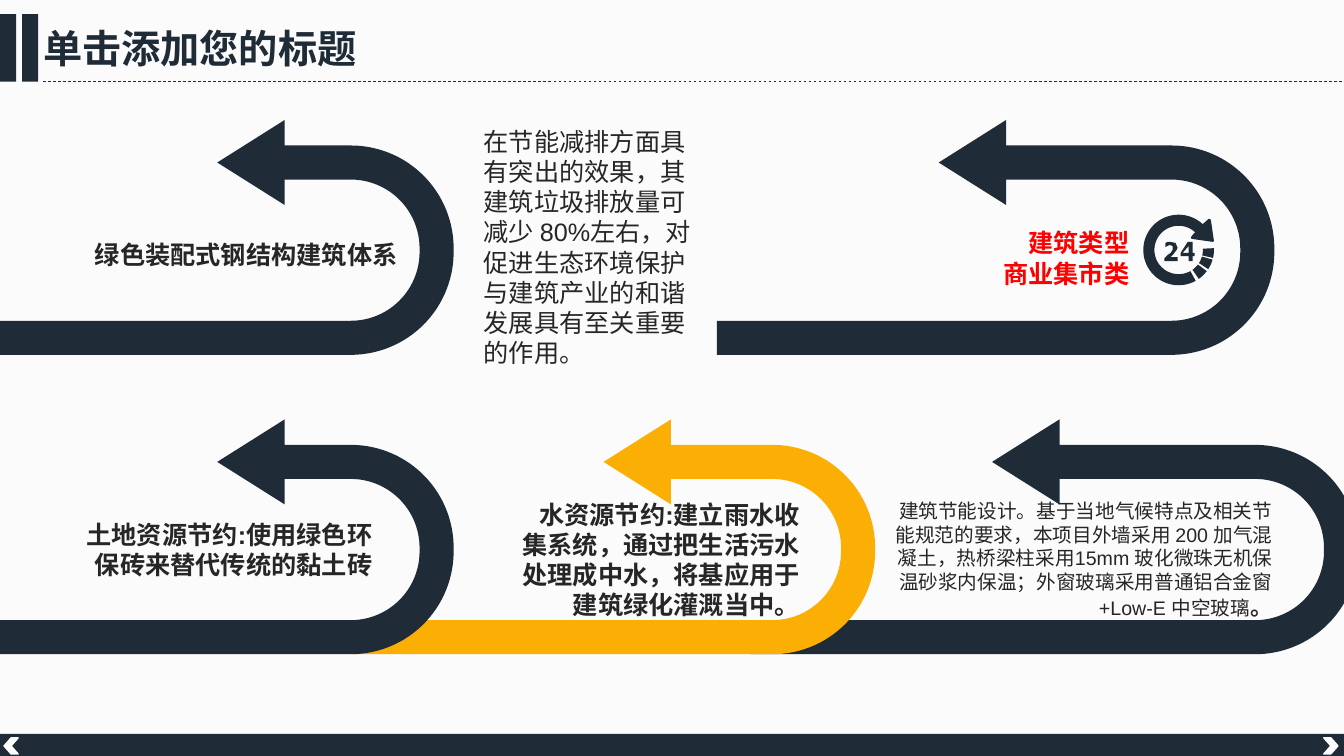
from math import cos, radians, sin

from pptx import Presentation
from pptx.dml.color import RGBColor
from pptx.enum.dml import MSO_LINE
from pptx.enum.shapes import MSO_CONNECTOR, MSO_SHAPE
from pptx.enum.text import PP_ALIGN
from pptx.oxml.ns import qn
from pptx.util import Inches, Pt
from lxml.etree import SubElement

NAVY, AMBER, RED, INK, WHITE = "1F2B37", "FBAE03", "FF0000", "262626", "FFFFFF"
WIDTH, HEIGHT = 13.33, 7.5
BODY = {"size": Pt(18), "name": "Arial", "bold": False}
BOLD = {**BODY, "bold": True}
SMALL = {**BODY, "size": Pt(14)}
STOP = {**BOLD, "size": Pt(16)}
TITLE = {"size": Pt(28), "name": "Noto Sans CJK SC", "bold": True}
LEFT, RIGHT = PP_ALIGN.LEFT, PP_ALIGN.RIGHT

bars = [(0, 0.14, 0.16, 0.67), (0.22, 0.14, 0.16, 0.67), (0, 7.28, WIDTH, 0.22)]
page_marks = [(13.13, 0), (0.04, 180)]
ARROW_DEPTH = 2.33
BEND = [0.145, 0.181, 0.287, 0.438]
arrows = [
    (7.11, 1.19, 5.53, 0.602, NAVY),
    (0, 1.19, 4.5, 0.521, NAVY),
    (7.44, 4.16, 6.03, 0.602, NAVY),
    (3.5, 4.16, 5.18, 0.52, AMBER),
    (0, 4.16, 4.5, 0.521, NAVY),
]

texts = [
    ((0.33, 0.19, 4.08, 0.57), LEFT, NAVY, [[("单击添加您的标题", TITLE)]]),
    ((0.83, 2.33, 3.21, 0.4), RIGHT, INK, [[("绿色装配式钢结构建筑体系", BOLD)]]),
    ((4.7, 1.2, 2.4, 2.52), LEFT, INK, [[(
        "在节能减排方面具有突出的效果，其建筑垃圾排放量可减少 80%左右，"
        "对促进生态环境保护与建筑产业的和谐发展具有至关重要的作用。", BODY)]]),
    ((9.24, 2.21, 2.06, 0.71), RIGHT, RED, [[("建筑类型", BOLD)], [("商业集市类", BOLD)]]),
    ((0.65, 5.1, 3.14, 0.71), RIGHT, INK, [[(
        "土地资源节约:使用绿色环保砖来替代传统的黏土砖", BOLD)]]),
    ((5.06, 4.9, 2.97, 1.31), RIGHT, INK, [[(
        "水资源节约:建立雨水收集系统，通过把生活污水处理成中水，"
        "将基应用于建筑绿化灌溉当中。", BOLD)]]),
    ((8.68, 4.9, 4.04, 1.31), RIGHT, INK, [[(
        "建筑节能设计。基于当地气候特点及相关节能规范的要求，本项目外墙采用 200 加气混凝土，"
        "热桥梁柱采用15mm 玻化微珠无机保温砂浆内保温；外窗玻璃采用普通铝合金窗 +Low-E 中空玻璃",
        SMALL), ("。", STOP)]]),
]

CLOCK_X, CLOCK_Y, CLOCK_OUTER, CLOCK_INNER = 11.69, 2.48, 0.35, 0.24
clock_dashes = [(-3, 13), (16, 33), (37, 55)]
clock_head = [(11.82, 2.34), (11.81, 2.36), (11.82, 2.37), (12.03, 2.4),
              (12.04, 2.39), (12.01, 2.18), (11.99, 2.17)]
digit_two = [(11.68, 2.59), (11.55, 2.59), (11.55, 2.56), (11.58, 2.53), (11.61, 2.51),
             (11.63, 2.48), (11.63, 2.44), (11.6, 2.43), (11.58, 2.44), (11.56, 2.45),
             (11.56, 2.41), (11.58, 2.4), (11.61, 2.4), (11.66, 2.41), (11.68, 2.46),
             (11.67, 2.48), (11.64, 2.52), (11.61, 2.55), (11.68, 2.55)]
digit_four = [(11.85, 2.54), (11.83, 2.54), (11.83, 2.59), (11.79, 2.59), (11.79, 2.54),
              (11.71, 2.54), (11.71, 2.51), (11.78, 2.4), (11.83, 2.4), (11.83, 2.51),
              (11.85, 2.51)]
four_hole = [(11.79, 2.51), (11.79, 2.44), (11.73, 2.51)]


def rgb(value):
    return RGBColor.from_string(value)


def paint(shape, fill):
    shape.shadow.inherit = False
    shape.fill.solid()
    shape.fill.fore_color.rgb = rgb(fill)
    shape.line.fill.background()
    return shape


def add_preset(kind, box, fill):
    return paint(slide.shapes.add_shape(kind, *map(Inches, box)), fill)


def add_outline(*contours):
    (start, *rest), *holes = [[(Inches(x), Inches(y)) for x, y in c] for c in contours]
    builder = slide.shapes.build_freeform(*start, scale=1.0)
    builder.add_line_segments(rest, close=True)
    for hole in holes:
        builder.move_to(*hole[0])
        builder.add_line_segments(hole[1:], close=True)
    paint(builder.convert_to_shape(), NAVY)


def arc(radius, first, last, steps):
    angles = [radians(first + (last - first) * i / steps) for i in range(steps + 1)]
    return [(CLOCK_X + radius * cos(a), CLOCK_Y + radius * sin(a)) for a in angles]


def ring_part(first, last, steps):
    return arc(CLOCK_OUTER, first, last, steps) + arc(CLOCK_INNER, last, first, steps)


def add_text(box, align, color, paragraphs):
    frame = slide.shapes.add_textbox(*map(Inches, box)).text_frame
    frame.word_wrap = True
    for i, runs in enumerate(paragraphs):
        paragraph = frame.add_paragraph() if i else frame.paragraphs[0]
        paragraph.alignment = align
        for words, style in runs:
            run = paragraph.add_run()
            run.text = words
            for key, value in style.items():
                setattr(run.font, key, value)
            run.font.color.rgb = rgb(color)


deck = Presentation()
deck.slide_width, deck.slide_height = Inches(WIDTH), Inches(HEIGHT)
slide = deck.slides.add_slide(deck.slide_layouts[6])
slide.background.fill.solid()
slide.background.fill.fore_color.rgb = rgb("FBFBFB")

title_rule = slide.shapes.add_connector(
    MSO_CONNECTOR.STRAIGHT, *map(Inches, (0.43, 0.81, WIDTH, 0.81)))
title_rule.line.color.rgb = rgb(NAVY)
title_rule.line.width = Pt(0.5)
title_rule.line.dash_style = MSO_LINE.DASH
SubElement(title_rule._element.spPr, qn("a:effectLst"))

for bar in bars:
    add_preset(MSO_SHAPE.RECTANGLE, bar, NAVY)
for mark_left, turn in page_marks:
    mark = add_preset(MSO_SHAPE.CHEVRON, (mark_left, 7.32, 0.14, 0.16), WHITE)
    mark.rotation = turn
    mark.line.color.rgb = rgb(WHITE)
    mark.line.width = Pt(1)

for left, top, length, tail, color in arrows:
    shift = (length - ARROW_DEPTH) / 2
    arrow = add_preset(MSO_SHAPE.U_TURN_ARROW,
                       (left + shift, top - shift, ARROW_DEPTH, length), color)
    arrow.rotation = 90
    arrow._element.spPr.xfrm.set("flipH", "1")
    for i, amount in enumerate(BEND + [tail]):
        arrow.adjustments[i] = amount

add_outline(ring_part(-47, -299, 48) + clock_head)
for first, last in clock_dashes:
    add_outline(ring_part(first, last, 4))
add_outline(digit_two)
add_outline(digit_four, four_hole)

for entry in texts:
    add_text(*entry)

deck.save("out.pptx")
